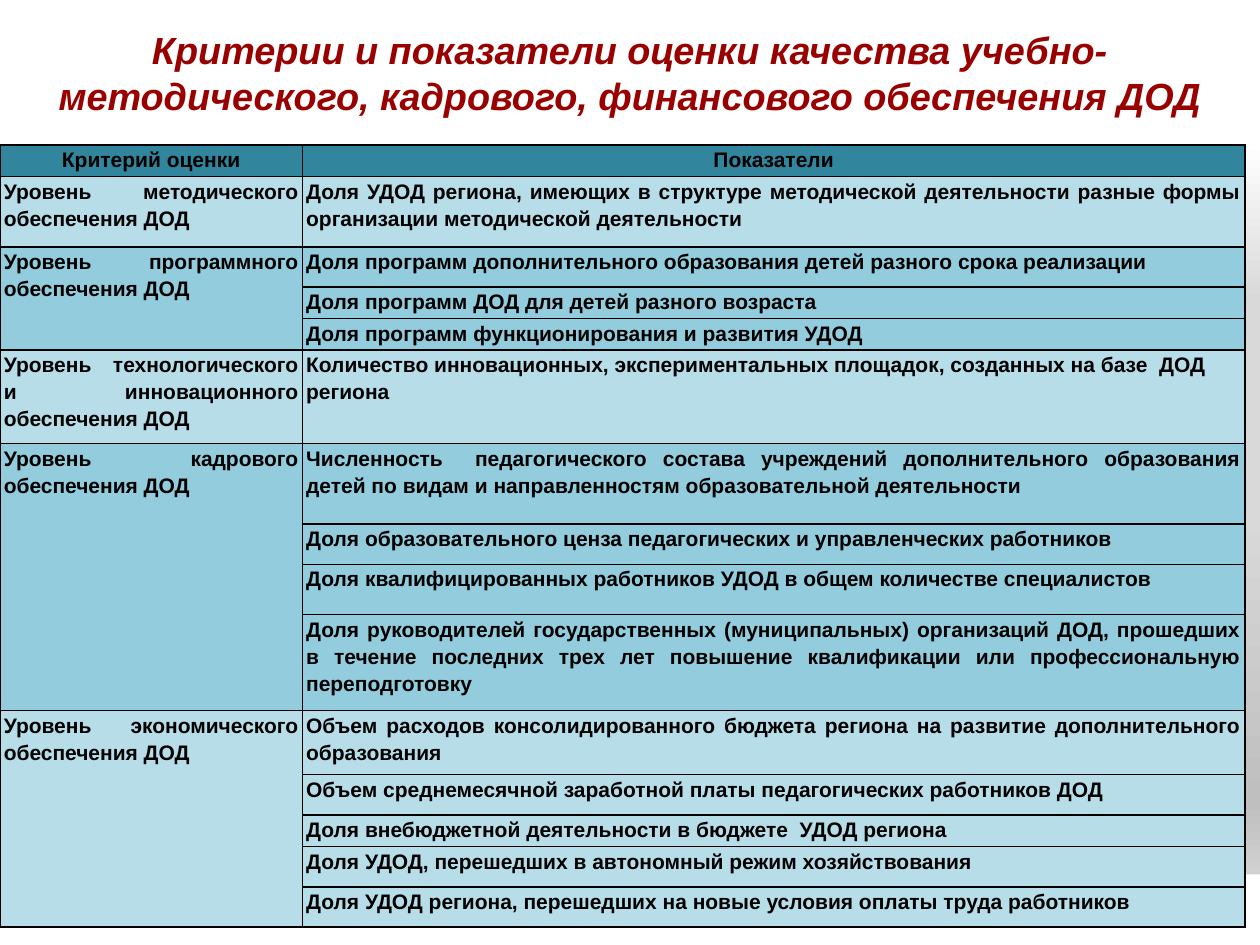
from lxml import etree
from pptx import Presentation
from pptx.dml.color import RGBColor
from pptx.enum.shapes import MSO_SHAPE
from pptx.enum.text import MSO_ANCHOR, MSO_AUTO_SIZE, PP_ALIGN
from pptx.oxml.ns import qn
from pptx.util import Inches, Pt

CENTER, LEFT, JUSTIFY = PP_ALIGN.CENTER, PP_ALIGN.LEFT, PP_ALIGN.JUSTIFY
MIDDLE, TOP = MSO_ANCHOR.MIDDLE, MSO_ANCHOR.TOP
TITLE_ONLY = 5

COLORS = {"title": "990000", "text": "000000", "border": "000000", "band": "FFFFFF",
          "header": "31859C", "light": "B7DEE8", "dark": "93CDDD"}
BACKGROUND_STOPS = [(0, "FFFFFF"), (15, "FFFFFF"), (32, "D9D9D9"),
                    (54, "D9D9D9"), (85, "BFBFBF"), (100, "E6E6E6")]
TITLE_FONT = {"name": "Arial", "size": Pt(21.6), "bold": True, "italic": True}
CELL_FONT = {"name": "Arial", "size": Pt(12), "bold": True}
CELL_MARGINS = {"margin_left": Inches(0.03), "margin_right": Inches(0.03),
                "margin_top": 0, "margin_bottom": 0}

TITLE = ("Критерии и показатели оценки качества учебно-методического, "
         "кадрового, финансового обеспечения ДОД")
HEADINGS = ("Критерий оценки", "Показатели")
HEADER_HEIGHT = 0.25
COLUMN_WIDTHS = (2.4, 7.48)

# Each criterion with its indicators: (row height, text, alignment)
CRITERIA = [
    ("Уровень методического обеспечения ДОД", [
        (0.56, "Доля УДОД региона, имеющих в структуре методической деятельности "
               "разные формы организации методической деятельности", JUSTIFY)]),
    ("Уровень программного обеспечения ДОД", [
        (0.32, "Доля программ дополнительного образования детей разного срока "
               "реализации", JUSTIFY),
        (0.25, "Доля программ ДОД для детей разного возраста", JUSTIFY),
        (0.25, "Доля программ функционирования и развития УДОД", JUSTIFY)]),
    ("Уровень технологического и инновационного обеспечения ДОД", [
        (0.74, "Количество инновационных, экспериментальных площадок, созданных "
               "на базе  ДОД региона", LEFT)]),
    ("Уровень кадрового обеспечения ДОД", [
        (0.64, "Численность  педагогического состава учреждений дополнительного "
               "образования детей по видам и направленностям образовательной "
               "деятельности", JUSTIFY),
        (0.32, "Доля образовательного ценза педагогических и управленческих "
               "работников", JUSTIFY),
        (0.4, "Доля квалифицированных работников УДОД в общем количестве "
              "специалистов", JUSTIFY),
        (0.76, "Доля руководителей государственных (муниципальных) организаций "
               "ДОД, прошедших в течение последних трех лет повышение "
               "квалификации или профессиональную переподготовку", JUSTIFY)]),
    ("Уровень экономического обеспечения ДОД", [
        (0.51, "Объем расходов консолидированного бюджета региона на развитие "
               "дополнительного образования", JUSTIFY),
        (0.32, "Объем среднемесячной заработной платы педагогических работников "
               "ДОД", JUSTIFY),
        (0.25, "Доля внебюджетной деятельности в бюджете  УДОД региона", JUSTIFY),
        (0.32, "Доля УДОД, перешедших в автономный режим хозяйствования", JUSTIFY),
        (0.32, "Доля УДОД региона, перешедших на новые условия оплаты труда "
               "работников", JUSTIFY)]),
]


def rgb(name):
    return RGBColor.from_string(COLORS[name])


def apply_format(target, values):
    for attribute, value in values.items():
        setattr(target, attribute, value)


def solid_line(tag, color, points):
    line = etree.Element(qn(tag), w=str(Pt(points)))
    fill = etree.SubElement(line, qn("a:solidFill"))
    etree.SubElement(fill, qn("a:srgbClr"), val=COLORS[color])
    return line


def paint_background(slide):
    fill = slide.background.fill
    fill.gradient()
    fill.gradient_angle = 270
    stops = next(slide.background._cSld.iter(qn("a:gsLst")))
    for stop in list(stops):
        stops.remove(stop)
    for percent, color in BACKGROUND_STOPS:
        stop = etree.SubElement(stops, qn("a:gs"), pos=str(percent * 1000))
        etree.SubElement(stop, qn("a:srgbClr"), val=color)


def add_band(slide, left, top, width, height):
    band = slide.shapes.add_shape(MSO_SHAPE.RECTANGLE, left, top, width, height)
    band.shadow.inherit = False
    band.fill.solid()
    band.fill.fore_color.rgb = rgb("band")
    band.line.fill.background()


def place_title(slide, left, top, width, height):
    title = slide.shapes.title
    apply_format(title, {"left": left, "top": top, "width": width, "height": height})
    title.fill.solid()
    title.fill.fore_color.rgb = rgb("band")
    frame = title.text_frame
    frame.text = TITLE
    apply_format(frame, {"word_wrap": True, "auto_size": MSO_AUTO_SIZE.NONE,
                         "vertical_anchor": MIDDLE})
    frame.paragraphs[0].alignment = CENTER
    run = frame.paragraphs[0].runs[0]
    apply_format(run.font, TITLE_FONT)
    run.font.color.rgb = rgb("title")
    # Letter outline
    run.font._element.insert(0, solid_line("a:ln", "title", 0.75))


def style_cell(cell, fill):
    apply_format(cell, CELL_MARGINS)
    cell.vertical_anchor = TOP
    properties = cell._tc.get_or_add_tcPr()
    for side in ("a:lnL", "a:lnR", "a:lnT", "a:lnB"):
        properties.append(solid_line(side, "border", 1))
    cell.fill.solid()
    cell.fill.fore_color.rgb = rgb(fill)


def write_cell(cell, text, alignment):
    cell.text = text
    paragraph = cell.text_frame.paragraphs[0]
    apply_format(paragraph, {"alignment": alignment, "line_spacing": 1.15})
    font = paragraph.runs[0].font
    apply_format(font, CELL_FONT)
    font.color.rgb = rgb("text")


def add_criteria_table(slide, left, top, width, height):
    heights = [HEADER_HEIGHT] + [row[0] for _, rows in CRITERIA for row in rows]
    table = slide.shapes.add_table(len(heights), len(HEADINGS),
                                   left, top, width, height).table
    for column, column_width in zip(table.columns, COLUMN_WIDTHS):
        column.width = Inches(column_width)
    for row, row_height in zip(table.rows, heights):
        row.height = Inches(row_height)

    # Header row
    for column, heading in enumerate(HEADINGS):
        style_cell(table.cell(0, column), "header")
        write_cell(table.cell(0, column), heading, CENTER)

    # Criteria with alternating fills, merged down over their indicators
    first = 1
    for number, (criterion, indicators) in enumerate(CRITERIA):
        fill = ("light", "dark")[number % 2]
        for row, (_, indicator, alignment) in enumerate(indicators, first):
            style_cell(table.cell(row, 0), fill)
            style_cell(table.cell(row, 1), fill)
            write_cell(table.cell(row, 1), indicator, alignment)
        last = first + len(indicators) - 1
        if last > first:
            table.cell(first, 0).merge(table.cell(last, 0))
        write_cell(table.cell(first, 0), criterion, JUSTIFY)
        first = last + 1


def main():
    presentation = Presentation()
    presentation.slide_width, presentation.slide_height = Inches(10), Inches(7.5)
    slide = presentation.slides.add_slide(presentation.slide_layouts[TITLE_ONLY])
    paint_background(slide)
    add_band(slide, 0, Inches(6.94), Inches(10.01), Inches(0.58))
    place_title(slide, 0, 0, Inches(10), Inches(1.15))
    add_criteria_table(slide, 0, Inches(1.15), Inches(sum(COLUMN_WIDTHS)), Inches(6.22))
    presentation.save("out.pptx")


if __name__ == "__main__":
    main()
